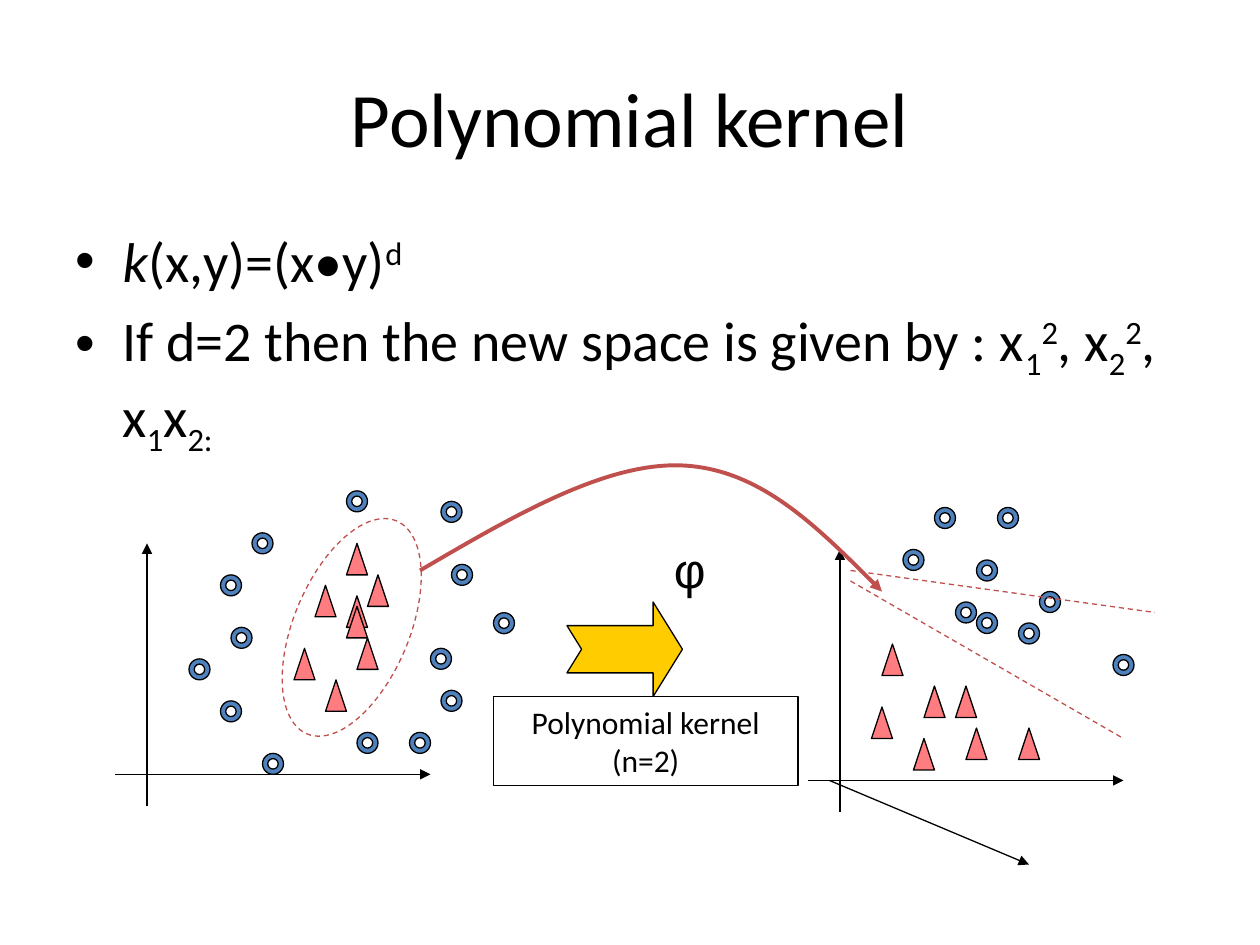
from dataclasses import dataclass

from pptx import Presentation
from pptx.dml.color import RGBColor
from pptx.enum import dml, shapes, text
from pptx.oxml.ns import qn
from pptx.oxml.xmlchemy import OxmlElement
from pptx.util import Pt

PRESET = shapes.MSO_SHAPE
GRID = 6  # points per plot unit


@dataclass(frozen=True)
class Theme:
    font: str = "Calibri"
    symbol_font: str = "Arial"
    ink: str = "000000"
    outer: str = "4F81BD"
    inner: str = "FF7C80"
    mapping: str = "FFCC00"
    boundary: str = "C0504D"
    title: int = 44
    body: int = 32
    symbol: int = 28
    label: int = 18
    hairline: float = 0.75
    heavy: float = 2.25


class Deck:
    def __init__(self, theme):
        self.theme = theme
        self.prs = Presentation()
        self.prs.slide_width, self.prs.slide_height = Pt(720), Pt(540)
        self.s = self.prs.slides.add_slide(self.prs.slide_layouts[5])

    def run(self, p, words, size, name=None, italic=False, baseline=0):
        r = p.add_run()
        r.text = words
        style = {"name": name or self.theme.font, "size": Pt(size), "italic": italic}
        for key, value in style.items():
            setattr(r.font, key, value)
        r.font.color.rgb = RGBColor.from_string(self.theme.ink)
        if baseline:
            r._r.get_or_add_rPr().set("baseline", str(baseline * 1000))

    def line_style(self, line, color=None, width=None, dashed=False, arrow=False):
        line.color.rgb = RGBColor.from_string(color or self.theme.ink)
        line.width = Pt(width or self.theme.hairline)
        if dashed:
            line.dash_style = dml.MSO_LINE.DASH
        if arrow:
            tail = OxmlElement("a:tailEnd")
            tail.set("type", "triangle")
            line._get_or_add_ln().append(tail)

    def title(self, words):
        sp = self.s.shapes.title
        box = {"left": 36, "top": 21.6, "width": 648, "height": 90}
        for key, value in box.items():
            setattr(sp, key, Pt(value))
        tf = sp.text_frame
        tf.vertical_anchor = text.MSO_ANCHOR.MIDDLE
        p = tf.paragraphs[0]
        p.alignment = text.PP_ALIGN.CENTER
        self.run(p, words, self.theme.title)

    def textbox(self, *box):
        tf = self.s.shapes.add_textbox(*map(Pt, box)).text_frame
        tf.word_wrap = True
        return tf

    def bullets(self, box, items):
        """Each item is a list of (words, baseline percent, italic) runs."""
        tf = self.textbox(*box)
        for i, item in enumerate(items):
            p = tf.add_paragraph() if i else tf.paragraphs[0]
            if i:
                p.space_before = Pt(0.2 * self.theme.body)
            pPr = p._p.get_or_add_pPr()
            pPr.set("marL", str(Pt(27)))
            pPr.set("indent", str(-Pt(27)))
            for tag, key, value in (("a:buFont", "typeface", self.theme.symbol_font),
                                    ("a:buChar", "char", "•")):
                el = OxmlElement(tag)
                el.set(key, value)
                pPr.append(el)
            for words, baseline, italic in item:
                self.run(p, words, self.theme.body, italic=italic, baseline=baseline)

    def symbol(self, box, words):
        p = self.textbox(*box).paragraphs[0]
        self.run(p, words, self.theme.symbol, self.theme.symbol_font)

    def shape(self, kind, box, fill=None, adjust=(), **line):
        sp = self.s.shapes.add_shape(kind, *map(Pt, box))
        sp.shadow.inherit = False
        for i, value in enumerate(adjust):
            sp.adjustments[i] = value
        if fill:
            sp.fill.solid()
            sp.fill.fore_color.rgb = RGBColor.from_string(fill)
        else:
            sp.fill.background()
        self.line_style(sp.line, **line)
        return sp

    def label(self, box, words):
        tf = self.shape(PRESET.RECTANGLE, box).text_frame
        tf.word_wrap = True
        p = tf.paragraphs[0]
        p.alignment = text.PP_ALIGN.CENTER
        self.run(p, words, self.theme.label)

    def line(self, start, end, **style):
        cx = self.s.shapes.add_connector(
            shapes.MSO_CONNECTOR.STRAIGHT, *map(Pt, (*start, *end)))
        self.line_style(cx.line, **style)
        cx._element.spPr.append(OxmlElement("a:effectLst"))

    def curve(self, points, **style):
        """Draw cubic Béziers: a start point, then three points per segment."""
        start, *rest = [(Pt(x), Pt(y)) for x, y in points]
        builder = self.s.shapes.build_freeform(*start)
        builder.add_line_segments(rest, close=False)
        sp = builder.convert_to_shape()
        sp.shadow.inherit = False
        sp.fill.background()
        self.line_style(sp.line, **style)
        steps = list(sp._element.iter(qn("a:lnTo")))
        for i in range(0, len(steps), 3):
            bezier = OxmlElement("a:cubicBezTo")
            steps[i].addprevious(bezier)
            for step in steps[i:i + 3]:
                bezier.append(step[0])
                step.getparent().remove(step)

    def plot(self, origin, circles, triangles, lines=()):
        """Draw axes and markers in grid units, y upwards from the origin."""
        def at(x, y):
            return origin[0] + GRID * x, origin[1] - GRID * y

        for start, end in (((-3, 0), (27, 0)), ((0, -3), (0, 22))):
            self.line(at(*start), at(*end), arrow=True)
        for point in circles:
            x, y = at(*point)
            self.shape(PRESET.DONUT, (x - 6, y - 6, 12, 12), self.theme.outer, [0.25])
        for point in triangles:
            x, y = at(*point)
            self.shape(PRESET.ISOSCELES_TRIANGLE, (x - 6, y - 18, 12, 18), self.theme.inner)
        for start, end, style in lines:
            self.line(at(*start), at(*end), **style)


def main():
    theme = Theme()
    deck = Deck(theme)
    deck.title("Polynomial kernel")
    sub, sup = -25, 30
    formula = [("k", 0, True), ("(x,y)=(x•y)", 0, False), ("d", sup, False)]
    space = [("If d=2 then the new space is given by : x", 0), ("1", sub), ("2", sup),
             (", x", 0), ("2", sub), ("2", sup), (", x", 0), ("1", sub), ("x", 0),
             ("2:", sub)]
    deck.bullets((36, 126, 648, 356.4),
                 [formula, [(words, base, False) for words, base in space]])

    deck.shape(PRESET.NOTCHED_RIGHT_ARROW, (324, 344, 66, 54), theme.mapping, [0.5, 0.31])
    deck.label((282, 398, 174, 51), "Polynomial kernel (n=2)")
    boundary = {"color": theme.boundary, "dashed": True}
    deck.plot(
        (480, 446),
        circles=[(10, 25), (14, 20), (7, 21), (16, 25), (12, 16), (14, 15), (20, 17),
                 (18, 14), (27, 11)],
        triangles=[(5, 10), (9, 6), (12, 6), (13, 2), (18, 2), (8, 1), (4, 4)],
        lines=[((1, 19), (27, 4), boundary), ((1, 20), (30, 16), boundary),
               ((-1, 0), (18, -8), {"arrow": True})])
    deck.plot(
        (84, 442.5),
        circles=[(9, 13), (8, 6), (21, 3), (11, 22), (30, 19), (20, 26), (8, 18),
                 (12, 1), (28, 11), (29, 7), (26, 3), (5, 10), (29, 25), (34, 14.4)],
        triangles=[(17, 15), (18, 6), (15, 9), (22, 16), (20, 19), (21, 10), (20, 14),
                   (20, 13)])
    cluster = deck.shape(PRESET.OVAL, (168, 292.5, 66, 132), **boundary)
    cluster.rotation = 22.8
    deck.curve([(240, 326), (293, 295), (346, 264), (390, 266), (434, 268), (469, 303),
                (504, 338)], color=theme.boundary, width=theme.heavy, arrow=True)
    deck.symbol((378, 304.5, 37.5, 41), "φ")
    deck.prs.save("out.pptx")


if __name__ == "__main__":
    main()
